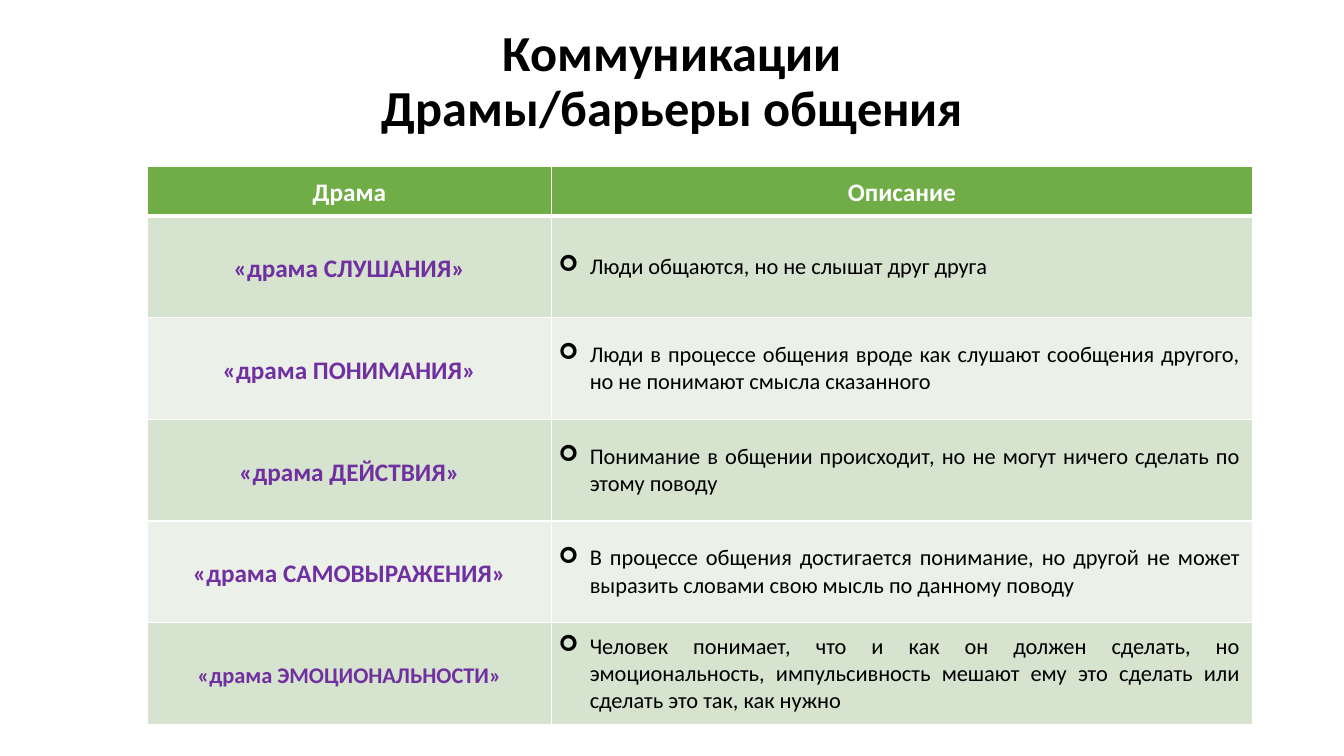
from dataclasses import dataclass

import pptx
import pptx.dml.color
import pptx.enum.text
import pptx.oxml.ns
import pptx.util
from lxml import etree
from pptx.util import Inches

ALIGN = pptx.enum.text.PP_ALIGN
ANCHOR = pptx.enum.text.MSO_ANCHOR


@dataclass(frozen=True)
class Theme:
    font: str = "Calibri"
    black: str = "000000"
    white: str = "FFFFFF"
    header: str = "70AD47"
    bands: tuple = ("D5E3CF", "EBF1E9")
    label: str = "7030A0"
    title_size: int = 36
    label_size: int = 18
    text_size: int = 16


HEADINGS = ("Драма", "Описание")
DRAMAS = (
    ("«драма СЛУШАНИЯ»", "Люди общаются, но не слышат друг друга"),
    ("«драма ПОНИМАНИЯ»",
     "Люди в процессе общения вроде как слушают сообщения другого, "
     "но не понимают смысла сказанного"),
    ("«драма ДЕЙСТВИЯ»",
     "Понимание в общении происходит, но не могут ничего сделать по этому поводу"),
    ("«драма САМОВЫРАЖЕНИЯ»",
     "В процессе общения достигается понимание, но другой не может "
     "выразить словами свою мысль по данному поводу"),
    ("«драма ЭМОЦИОНАЛЬНОСТИ»",
     "Человек понимает, что и как он должен сделать, но эмоциональность, "
     "импульсивность мешают ему это сделать или сделать это так, как нужно"),
)


def add_element(parent, tag, **attributes):
    element = etree.SubElement(parent, pptx.oxml.ns.qn(tag))
    for name, value in attributes.items():
        element.set(name, str(value))
    return element


class SlideBuilder:
    def __init__(self, page, theme):
        self.page = page
        self.theme = theme

    def style(self, para, size, color, bold):
        for span in para.runs:
            span.font.name = self.theme.font
            span.font.size = pptx.util.Pt(size)
            span.font.bold = bold
            span.font.color.rgb = pptx.dml.color.RGBColor.from_string(color)

    def title(self, text, left, top, width, height):
        box = self.page.shapes.title
        box.left, box.top, box.width, box.height = map(Inches, (left, top, width, height))
        frame = box.text_frame
        frame.vertical_anchor = ANCHOR.MIDDLE
        frame.auto_size = pptx.enum.text.MSO_AUTO_SIZE.NONE
        para = frame.paragraphs[0]
        para.text = text
        para.alignment = ALIGN.CENTER
        para.line_spacing = 0.9
        self.style(para, self.theme.title_size, self.theme.black, True)

    def table(self, left, top, widths, heights):
        frame = self.page.shapes.add_table(
            len(heights), len(widths), Inches(left), Inches(top),
            Inches(sum(widths)), Inches(sum(heights)))
        grid = frame.table
        for column, width in zip(grid.columns, widths):
            column.width = Inches(width)
        for row, height in zip(grid.rows, heights):
            row.height = Inches(height)
        return grid

    def cell(self, cell, text, fill, margins, top_line=1, bottom_line=1):
        """Fill and outline a cell, and return its paragraph."""
        properties = cell._tc.get_or_add_tcPr()
        lines = {"a:lnL": 1, "a:lnR": 1, "a:lnT": top_line, "a:lnB": bottom_line}
        for tag, points in lines.items():
            line = add_element(properties, tag, w=pptx.util.Pt(points))
            add_element(add_element(line, "a:solidFill"), "a:srgbClr", val=self.theme.white)
        cell.fill.solid()
        cell.fill.fore_color.rgb = pptx.dml.color.RGBColor.from_string(fill)
        cell.vertical_anchor = ANCHOR.MIDDLE
        (cell.margin_left, cell.margin_top,
         cell.margin_right, cell.margin_bottom) = map(Inches, margins)
        para = cell.text_frame.paragraphs[0]
        para.text = text
        return para

    def label_cell(self, cell, text, fill, color, size, **lines):
        para = self.cell(cell, text, fill, (0.07, 0, 0.07, 0), **lines)
        para.alignment = ALIGN.CENTER
        para.line_spacing = 1.15
        para.space_after = pptx.util.Pt(8)
        self.style(para, size, color, True)

    def bullet_cell(self, cell, text, fill, **lines):
        para = self.cell(cell, text, fill, (0.07, 0.08, 0.12, 0.08), **lines)
        para.alignment = ALIGN.JUSTIFY
        properties = para._p.get_or_add_pPr()
        properties.set("marL", str(Inches(0.31)))
        properties.set("indent", str(-Inches(0.31)))
        add_element(properties, "a:buFont", typeface="Wingdings")
        add_element(properties, "a:buChar", char="➢")
        self.style(para, self.theme.text_size, self.theme.black, False)


def main():
    theme = Theme()
    deck = pptx.Presentation()
    deck.slide_width, deck.slide_height = Inches(13.33), Inches(7.5)
    builder = SlideBuilder(deck.slides.add_slide(deck.slide_layouts[5]), theme)
    builder.title("Коммуникации\vДрамы/барьеры общения", 0.92, 0.33, 11.5, 0.98)

    grid = builder.table(1.46, 1.65, (4.01, 6.95), [0.49] + [1.01] * len(DRAMAS))
    for column, heading in enumerate(HEADINGS):
        builder.label_cell(grid.cell(0, column), heading, theme.header,
                           theme.white, theme.label_size, bottom_line=3)
    for row, (name, description) in enumerate(DRAMAS, start=1):
        fill = theme.bands[(row - 1) % 2]
        top_line = 3 if row == 1 else 1
        size = theme.text_size if row == len(DRAMAS) else theme.label_size
        builder.label_cell(grid.cell(row, 0), name, fill, theme.label, size, top_line=top_line)
        builder.bullet_cell(grid.cell(row, 1), description, fill, top_line=top_line)

    deck.save("out.pptx")


if __name__ == "__main__":
    main()
